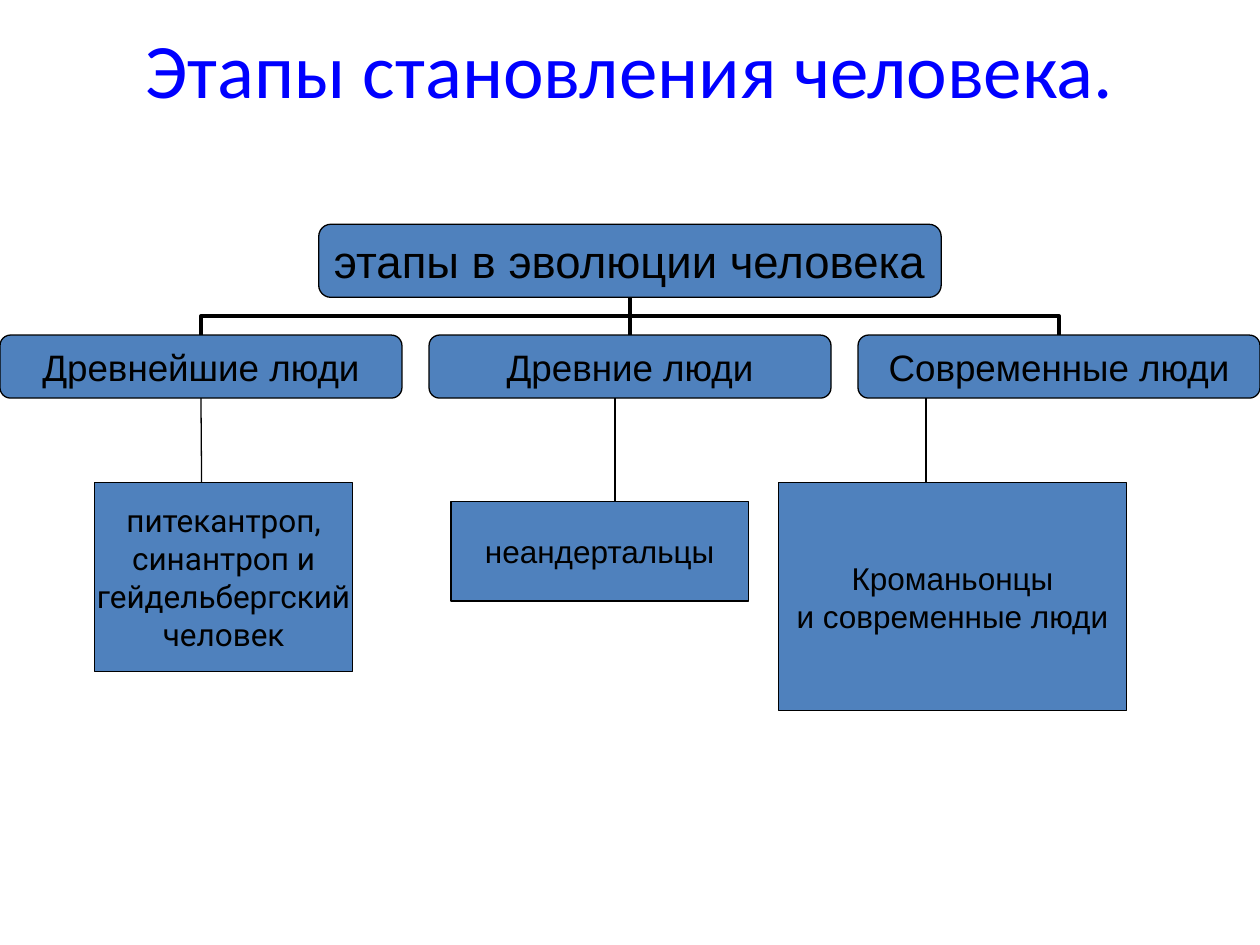
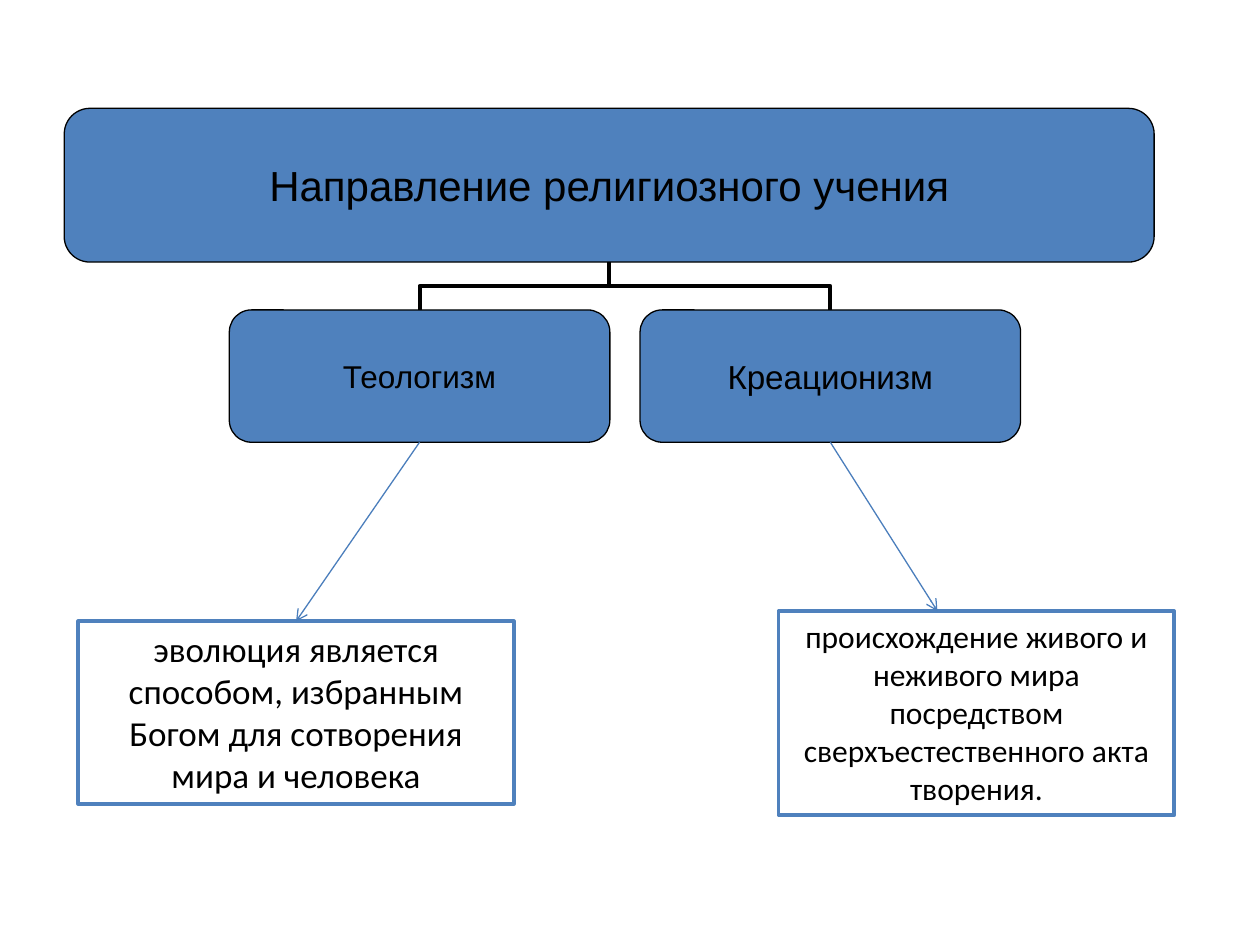
from lxml.etree import SubElement
from pptx import Presentation
from pptx.dml.color import RGBColor
from pptx.enum.shapes import MSO_CONNECTOR, MSO_SHAPE
from pptx.enum.text import MSO_ANCHOR, PP_ALIGN
from pptx.oxml.ns import qn
from pptx.util import Inches, Pt

BLACK = RGBColor(0x00, 0x00, 0x00)
WHITE = RGBColor(0xFF, 0xFF, 0xFF)
TITLE_BLUE = RGBColor(0x00, 0x00, 0xFF)
BOX_BLUE = RGBColor(0x4F, 0x81, 0xBD)
ARROW_BLUE = RGBColor(0x4B, 0x7E, 0xBC)

SLIDE_WIDTH, SLIDE_HEIGHT = 10, 7.5
TOP, BOTTOM = 0, 2

STAGES_TITLE = "Этапы становления человека."
STAGES_TREE = {
    "root": ("этапы в эволюции человека", 26, (2.53, 1.78, 4.94, 0.58)),
    "children": [("Древнейшие люди", 21), ("Древние люди", 21), ("Современные люди", 21)],
    "row": {"left": 0, "top": 2.66, "width": 3.19, "height": 0.5,
            "pitch": (SLIDE_WIDTH - 3.19) / 2},
    "insets": (0.03, 0.02),
}
STAGE_EXAMPLES = [
    (["питекантроп,", "синантроп и", "гейдельбергский", "человек"], "Roboto",
     (0.75, 3.83, 2.05, 1.5), 1.6),
    (["неандертальцы"], "Arial", (3.58, 3.98, 2.36, 0.79), 4.88),
    (["Кроманьонцы", "и современные люди"], "Arial", (6.18, 3.83, 2.76, 1.81), 7.35),
]

TEACHING_TREE = {
    "root": ("Направление религиозного учения", 24, (0.51, 0.86, 8.65, 1.22)),
    "children": [("Теологизм", 18), ("Креационизм", 19)],
    "row": {"left": 1.82, "top": 2.46, "width": 3.02, "height": 1.05, "pitch": 3.26},
    "insets": (0.06, 0.03),
}
TEACHING_MEANINGS = [
    ("эволюция является способом, избранным Богом для сотворения мира и человека",
     20, (0.62, 4.93, 3.46, 1.45), None),
    ("происхождение живого и неживого мира посредством сверхъестественного акта творения.",
     18, (6.18, 4.85, 3.14, 1.62), 7.44),
]


def write_text(shape, lines, size, font="Arial", color=BLACK, wrap=False,
               anchor=MSO_ANCHOR.MIDDLE, insets=(0.1, 0.05)):
    frame = shape.text_frame
    frame.word_wrap = wrap
    frame.vertical_anchor = anchor
    frame.margin_left = frame.margin_right = Inches(insets[0])
    frame.margin_top = frame.margin_bottom = Inches(insets[1])
    for index, line in enumerate(lines):
        paragraph = frame.add_paragraph() if index else frame.paragraphs[0]
        paragraph.alignment = PP_ALIGN.CENTER
        run = paragraph.add_run()
        run.text = line
        run.font.size = Pt(size)
        run.font.name = font
        run.font.color.rgb = color


def add_box(slide, place, lines, size, kind=MSO_SHAPE.RECTANGLE, fill=BOX_BLUE,
            outline=BLACK, outline_width=0.75, **text_format):
    shape = slide.shapes.add_shape(kind, *map(Inches, place))
    shape.shadow.inherit = False
    shape.fill.solid()
    shape.fill.fore_color.rgb = fill
    shape.line.color.rgb = outline
    shape.line.width = Pt(outline_width)
    write_text(shape, lines, size, **text_format)
    return shape


def middle(shape):
    return shape.left + shape.width // 2


def bottom(shape):
    return shape.top + shape.height


def add_line(slide, start, end, color=BLACK, width=0.75, kind=MSO_CONNECTOR.STRAIGHT,
             arrow=False):
    connector = slide.shapes.add_connector(kind, *start, *end)
    connector.line.color.rgb = color
    connector.line.width = Pt(width)
    if arrow:
        SubElement(connector.line._get_or_add_ln(), qn("a:tailEnd"), type="arrow")
    SubElement(connector._element.spPr, qn("a:effectLst"))
    return connector


def add_branch(slide, parent, child):
    start = middle(parent), bottom(parent)
    end = middle(child), child.top
    across, down = end[0] - start[0], end[1] - start[1]
    straight = abs(across) < Inches(0.02)
    kind = MSO_CONNECTOR.STRAIGHT if straight else MSO_CONNECTOR.ELBOW
    connector = add_line(slide, start, end, width=2.25, kind=kind)
    connector.begin_connect(parent, BOTTOM)
    connector.end_connect(child, TOP)
    if straight:
        return
    connector.width, connector.height = down, abs(across)
    connector.left = (start[0] + end[0] - down) // 2
    connector.top = (start[1] + end[1] - abs(across)) // 2
    transform = connector._element.spPr.find(qn("a:xfrm"))
    transform.set("rot", "16200000" if across > 0 else "5400000")
    transform.set("flipH", "1" if across > 0 else "0")
    transform.set("flipV", "0")


def add_tree(slide, tree):
    node_format = {"kind": MSO_SHAPE.ROUNDED_RECTANGLE, "insets": tree["insets"]}
    text, size, place = tree["root"]
    root = add_box(slide, place, [text], size, **node_format)
    row = tree["row"]
    children = []
    for column, (text, size) in enumerate(tree["children"]):
        place = (row["left"] + column * row["pitch"], row["top"], row["width"], row["height"])
        child = add_box(slide, place, [text], size, **node_format)
        add_branch(slide, root, child)
        children.append(child)
    return children


def build_stages(presentation):
    slide = presentation.slides.add_slide(presentation.slide_layouts[5])
    title = slide.shapes.title
    title.left, title.top, title.width, title.height = map(Inches, (0.5, 0, 9, 1.07))
    write_text(title, [STAGES_TITLE], 44, font="Calibri", color=TITLE_BLUE, wrap=True)
    stages = add_tree(slide, STAGES_TREE)
    for stage, (lines, font, place, line_x) in zip(stages, STAGE_EXAMPLES):
        example = add_box(slide, place, lines, 18, font=font)
        x = Inches(line_x)
        line = add_line(slide, (x, bottom(stage)), (x, example.top))
        if abs(x - middle(stage)) < Inches(0.02):
            line.begin_connect(stage, BOTTOM)


def build_teachings(presentation):
    slide = presentation.slides.add_slide(presentation.slide_layouts[6])
    teachings = add_tree(slide, TEACHING_TREE)
    for teaching, (text, size, place, arrow_x) in zip(teachings, TEACHING_MEANINGS):
        meaning = add_box(slide, place, [text], size, fill=WHITE, outline=BOX_BLUE,
                          outline_width=2, font="Calibri", wrap=True, anchor=MSO_ANCHOR.TOP)
        x = Inches(arrow_x) if arrow_x else middle(meaning)
        arrow = add_line(slide, (middle(teaching), bottom(teaching)), (x, meaning.top),
                         color=ARROW_BLUE, arrow=True)
        arrow.begin_connect(teaching, BOTTOM)
        if not arrow_x:
            arrow.end_connect(meaning, TOP)


def main():
    presentation = Presentation()
    presentation.slide_width = Inches(SLIDE_WIDTH)
    presentation.slide_height = Inches(SLIDE_HEIGHT)
    build_stages(presentation)
    build_teachings(presentation)
    presentation.save("out.pptx")


if __name__ == "__main__":
    main()
